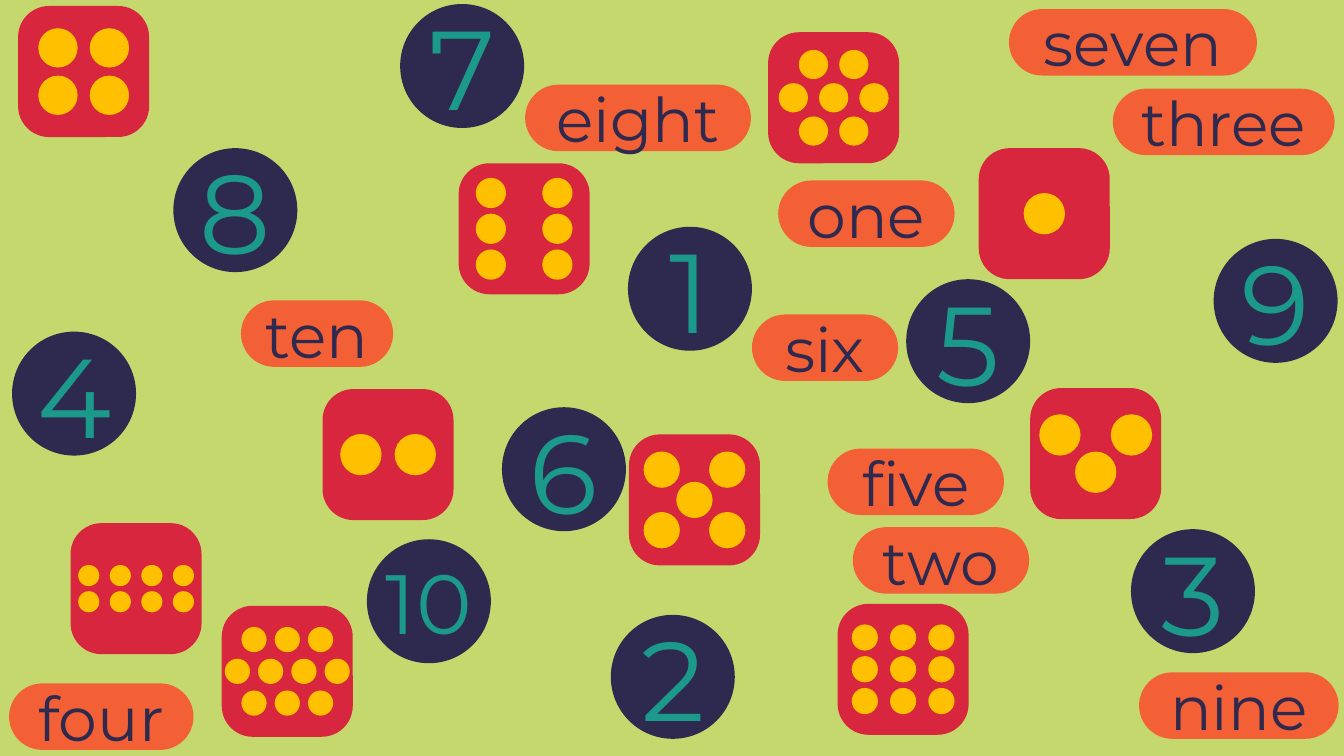
from dataclasses import dataclass

from pptx import Presentation
from pptx.dml.color import RGBColor
from pptx.enum.shapes import MSO_SHAPE
from pptx.enum.text import MSO_ANCHOR, MSO_AUTO_SIZE, PP_ALIGN
from pptx.util import Inches, Pt


@dataclass(frozen=True)
class Theme:
    background: str = "C5D86D"
    disc: str = "2E294E"
    numeral: str = "1B998B"
    die: str = "D7263D"
    pip: str = "FFC000"
    pill: str = "F46036"
    word: str = "2E294E"
    font: str = "Montserrat"
    digit_size: int = 80
    two_digit_size: int = 60
    word_size: int = 44


@dataclass(frozen=True)
class Box:
    """A rectangle measured in grid cells."""
    left: float
    top: float
    width: float
    height: float

    def centred(self, width, height, right=0, down=0):
        """A box of the given size, shifted from this box's centre."""
        return Box(self.left + (self.width - width) / 2 + right,
                   self.top + (self.height - height) / 2 + down, width, height)

    def lengths(self):
        return [round(CELL * value)
                for value in (self.left, self.top, self.width, self.height)]


THEME = Theme()
CELL = Inches(0.1)
COLUMNS, ROWS = 133.33, 75
DISC_SIDE, DIE_SIDE, PILL_HEIGHT = 12.3, 13, 6.6
DIE_ROUNDING, PILL_ROUNDING = 0.236, 0.5

# numeral, left, top
NUMERALS = [
    ("1", 62.3, 22.5), ("2", 60.6, 61), ("3", 112.2, 52.5), ("4", 1.2, 32.9),
    ("5", 89.9, 27.7), ("6", 49.8, 40.4), ("7", 39.7, 0.4), ("8", 17.2, 14.7),
    ("9", 120.4, 23.7), ("10", 36.4, 53.5),
]
# left, top, pips in each row, pip diameter, pitch across, pitch down
DICE = [
    (97.1, 14.7, (1,), 4.1, 0, 0),
    (32, 38.6, (2,), 4.1, 5.4, 0),
    (102.2, 38.5, (2, 1), 4.1, 7.1, 3.7),
    (1.8, 0.6, (2, 2), 3.9, 5.1, 4.7),
    (62.4, 43.1, (2, 1, 2), 3.6, 6.5, 3),
    (45.5, 16.2, (2, 2, 2), 3, 6.6, 3.55),
    (76.2, 3.2, (2, 3, 2), 2.9, 4, 3.3),
    (7, 51.9, (4, 4), 2.1, 3.13, 2.6),
    (83.1, 59.9, (3, 3, 3), 2.6, 3.8, 3.15),
    (22, 60.1, (3, 4, 3), 2.5, 3.3, 3.15),
]
# word, left, top, width
WORDS = [
    ("one", 77.2, 17.9, 17.5), ("two", 84.6, 52.3, 17.5),
    ("three", 110.4, 8.8, 22), ("four", 0.9, 67.8, 18.3),
    ("five", 82.1, 44.5, 17.5), ("six", 74.6, 31.2, 14.5),
    ("seven", 100.1, 0.9, 24.6), ("eight", 52.1, 8.4, 22.4),
    ("nine", 113, 66.7, 19.8), ("ten", 23.9, 29.8, 15.1),
]


def add_plain_shape(shapes, kind, box, colour):
    shape = shapes.add_shape(kind, *box.lengths())
    shape.shadow.inherit = False
    shape.fill.solid()
    shape.fill.fore_color.rgb = RGBColor.from_string(colour)
    shape.line.fill.background()
    return shape


def add_rounded(shapes, box, colour, rounding):
    shape = add_plain_shape(shapes, MSO_SHAPE.ROUNDED_RECTANGLE, box, colour)
    shape.adjustments[0] = rounding
    return shape


def write_centred(shape, text, size, colour):
    frame = shape.text_frame
    frame.vertical_anchor = MSO_ANCHOR.MIDDLE
    para = frame.paragraphs[0]
    para.alignment = PP_ALIGN.CENTER
    span = para.add_run()
    span.text = text
    span.font.name = THEME.font
    span.font.size = Pt(size)
    span.font.color.rgb = RGBColor.from_string(colour)


def add_numeral(page, box, numeral):
    group = page.shapes.add_group_shape()
    add_plain_shape(group.shapes, MSO_SHAPE.OVAL, box, THEME.disc)
    if len(numeral) == 1:
        size, text_box = THEME.digit_size, box.centred(9.5, 14.5)
    else:
        size, text_box = THEME.two_digit_size, box.centred(13.2, 11.1)
    label = group.shapes.add_textbox(*text_box.lengths())
    label.text_frame.word_wrap = False
    label.text_frame.auto_size = MSO_AUTO_SIZE.SHAPE_TO_FIT_TEXT
    write_centred(label, numeral, size, THEME.numeral)


def add_die(page, box, rows, diameter, across, down):
    """A die whose rows of pips are each centred on its face."""
    group = page.shapes.add_group_shape()
    add_rounded(group.shapes, box, THEME.die, DIE_ROUNDING)
    for row, count in enumerate(rows):
        for column in range(count):
            pip_box = box.centred(diameter, diameter,
                                  (column - (count - 1) / 2) * across,
                                  (row - (len(rows) - 1) / 2) * down)
            add_plain_shape(group.shapes, MSO_SHAPE.OVAL, pip_box, THEME.pip)


def add_word(page, box, word):
    pill = add_rounded(page.shapes, box, THEME.pill, PILL_ROUNDING)
    write_centred(pill, word, THEME.word_size, THEME.word)


def add_matching_page(deck):
    page = deck.slides.add_slide(deck.slide_layouts[6])
    page.background.fill.solid()
    page.background.fill.fore_color.rgb = RGBColor.from_string(THEME.background)
    for left, top, *pips in DICE:
        add_die(page, Box(left, top, DIE_SIDE, DIE_SIDE), *pips)
    for numeral, left, top in NUMERALS:
        add_numeral(page, Box(left, top, DISC_SIDE, DISC_SIDE), numeral)
    for word, left, top, width in WORDS:
        add_word(page, Box(left, top, width, PILL_HEIGHT), word)


def main():
    deck = Presentation()
    deck.slide_width = round(CELL * COLUMNS)
    deck.slide_height = CELL * ROWS
    add_matching_page(deck)
    deck.save("out.pptx")


if __name__ == "__main__":
    main()
